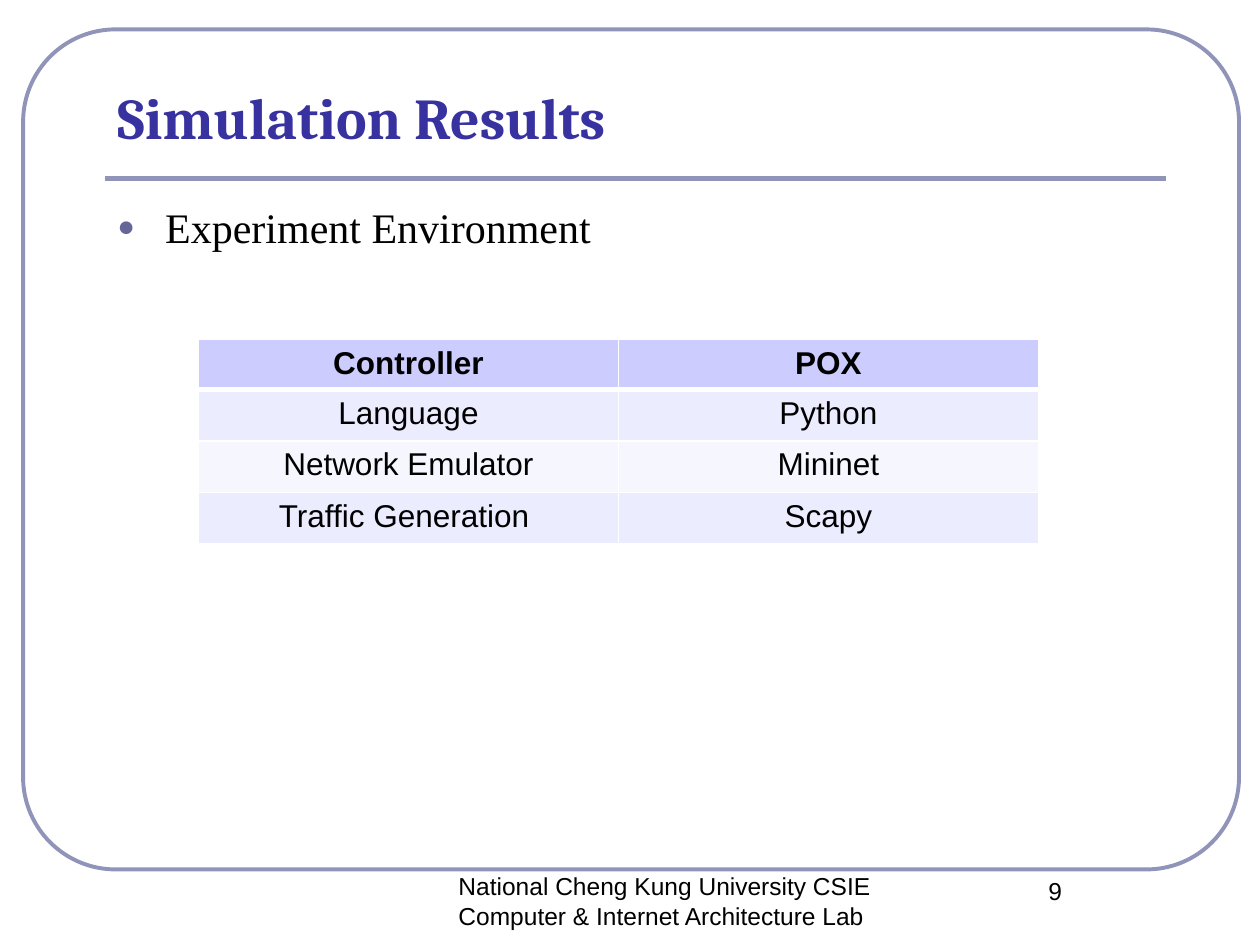
from lxml import etree
from pptx import Presentation
from pptx import util as u
from pptx.dml.color import RGBColor
from pptx.enum import shapes, text
from pptx.oxml import ns

BLACK = RGBColor(0x00, 0x00, 0x00)
WHITE = RGBColor(0xFF, 0xFF, 0xFF)
FRAME = RGBColor(0x90, 0x94, 0xB8)
TITLE = RGBColor(0x37, 0x32, 0xA0)
BULLET = RGBColor(0x66, 0x66, 0x99)
HEADER = RGBColor(0xCC, 0xCC, 0xFF)
BANDS = (RGBColor(0xEC, 0xEC, 0xFF), RGBColor(0xF6, 0xF6, 0xFF))

WIDTH, HEIGHT = 10, 7.5
COLUMNS, ROWS = 12, 9
CENTER = text.PP_ALIGN.CENTER
MARGIN, CONTENT = 1, 10.1  # left column and width of title, rule and body


def add_xml(parent, tag, **attributes):
    return etree.SubElement(parent, ns.qn(tag), attributes)


class SlideBuilder:
    """Draws on one slide; places and sizes are in grid columns and rows."""

    def __init__(self, prs):
        self.s = prs.slides.add_slide(prs.slide_layouts[6])

    def x(self, columns):
        return u.Inches(columns * WIDTH / COLUMNS)

    def y(self, rows):
        return u.Inches(rows * HEIGHT / ROWS)

    def box(self, left, top, width, height):
        return self.x(left), self.y(top), self.x(width), self.y(height)

    def frame(self, left, top, width, height, rounding):
        sp = self.s.shapes.add_shape(shapes.MSO_SHAPE.ROUNDED_RECTANGLE,
                                     *self.box(left, top, width, height))
        sp.adjustments[0] = rounding
        sp.shadow.inherit = False
        sp.fill.background()
        sp.line.color.rgb = FRAME
        sp.line.width = u.Pt(2.25)

    def rule(self, left, top, width):
        line = self.s.shapes.add_connector(
            shapes.MSO_CONNECTOR.STRAIGHT, self.x(left), self.y(top),
            self.x(left + width), self.y(top))
        line.line.color.rgb = FRAME
        line.line.width = u.Pt(3)
        add_xml(line._element.spPr, "a:effectLst")

    def run(self, p, words, size, font="Arial", color=BLACK, bold=False):
        r = p.add_run()
        r.text = words
        r.font.name, r.font.size, r.font.bold = font, u.Pt(size), bold
        r.font.color.rgb = color

    def text(self, place, words, size, align=None, inset=0.1,
             anchor=text.MSO_ANCHOR.TOP, **style):
        tf = self.s.shapes.add_textbox(*self.box(*place)).text_frame
        tf.word_wrap = True
        tf.vertical_anchor = anchor
        tf.margin_left = tf.margin_right = u.Inches(inset)
        p = tf.paragraphs[0]
        p.alignment = align
        self.run(p, words, size, **style)
        return p

    def bullet(self, place, words, size, **style):
        p = self.text(place, words, size, **style)
        p.space_before = u.Pt(size * 0.2)
        pPr = p._p.get_or_add_pPr()
        indent = u.Inches(0.38)
        pPr.set("marL", str(indent))
        pPr.set("indent", str(-indent))
        add_xml(add_xml(pPr, "a:buClr"), "a:srgbClr", val=str(BULLET))
        add_xml(pPr, "a:buSzPct", val="70000")
        add_xml(pPr, "a:buFont", typeface="Arial")
        add_xml(pPr, "a:buChar", char="●")

    def borders(self, cell, **widths):
        """Puts white borders before the cell's fill, as the schema orders."""
        tcPr = cell._tc.get_or_add_tcPr()
        for i, side in enumerate("LRTB"):
            width = u.Pt(widths.get(side, 1))
            ln = add_xml(tcPr, f"a:ln{side}", w=str(width))
            add_xml(add_xml(ln, "a:solidFill"), "a:srgbClr", val=str(WHITE))
            tcPr.insert(i, ln)

    def table(self, left, top, width, heights, rows):
        table = self.s.shapes.add_table(
            len(rows), len(rows[0]),
            *self.box(left, top, width, sum(heights))).table
        for i, (row, height) in enumerate(zip(rows, heights)):
            table.rows[i].height = self.y(height)
            for j, words in enumerate(row):
                cell = table.cell(i, j)
                cell.fill.solid()
                cell.fill.fore_color.rgb = BANDS[(i - 1) % 2] if i else HEADER
                self.borders(cell, T=3 if i == 1 else 1, B=1 if i else 3)
                p = cell.text_frame.paragraphs[0]
                p.alignment = CENTER
                self.run(p, words, 18, bold=i == 0)


def main():
    prs = Presentation()
    prs.slide_width, prs.slide_height = u.Inches(WIDTH), u.Inches(HEIGHT)
    slide = SlideBuilder(prs)

    slide.frame(0.22, 0.28, 11.58, 8, rounding=0.11)
    slide.rule(MARGIN, 1.7, CONTENT)
    slide.text((MARGIN, 0.72, CONTENT, 0.78), "Simulation Results", 33,
               anchor=text.MSO_ANCHOR.BOTTOM, font="Cambria", color=TITLE,
               bold=True)
    slide.text((3.73, 8.24, 5.2, 0.6),
               "National Cheng Kung University CSIE "
               "Computer & Internet Architecture Lab ",
               14, align=CENTER, inset=0.2)
    slide.text((9, 8.28, 2.1, 0.6), "9", 14, align=CENTER)
    slide.bullet((MARGIN, 1.86, CONTENT, 5.94), "Experiment Environment", 24,
                 font="Times New Roman")
    slide.table(1.89, 3.23, 8, (0.45, 0.49, 0.49, 0.49), (
        ("Controller", "POX"),
        ("Language", "Python"),
        ("Network Emulator", "Mininet"),
        ("Traffic Generation ", "Scapy"),
    ))
    prs.save("out.pptx")


if __name__ == "__main__":
    main()
